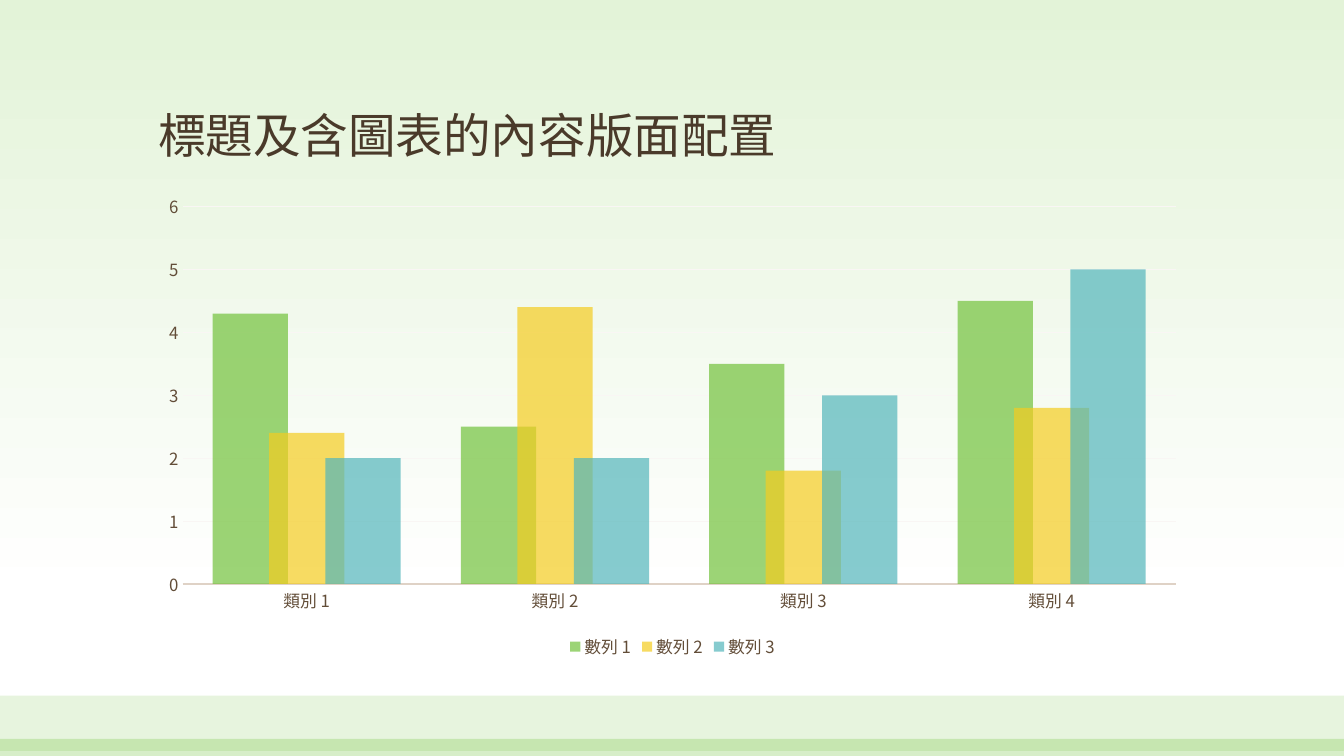
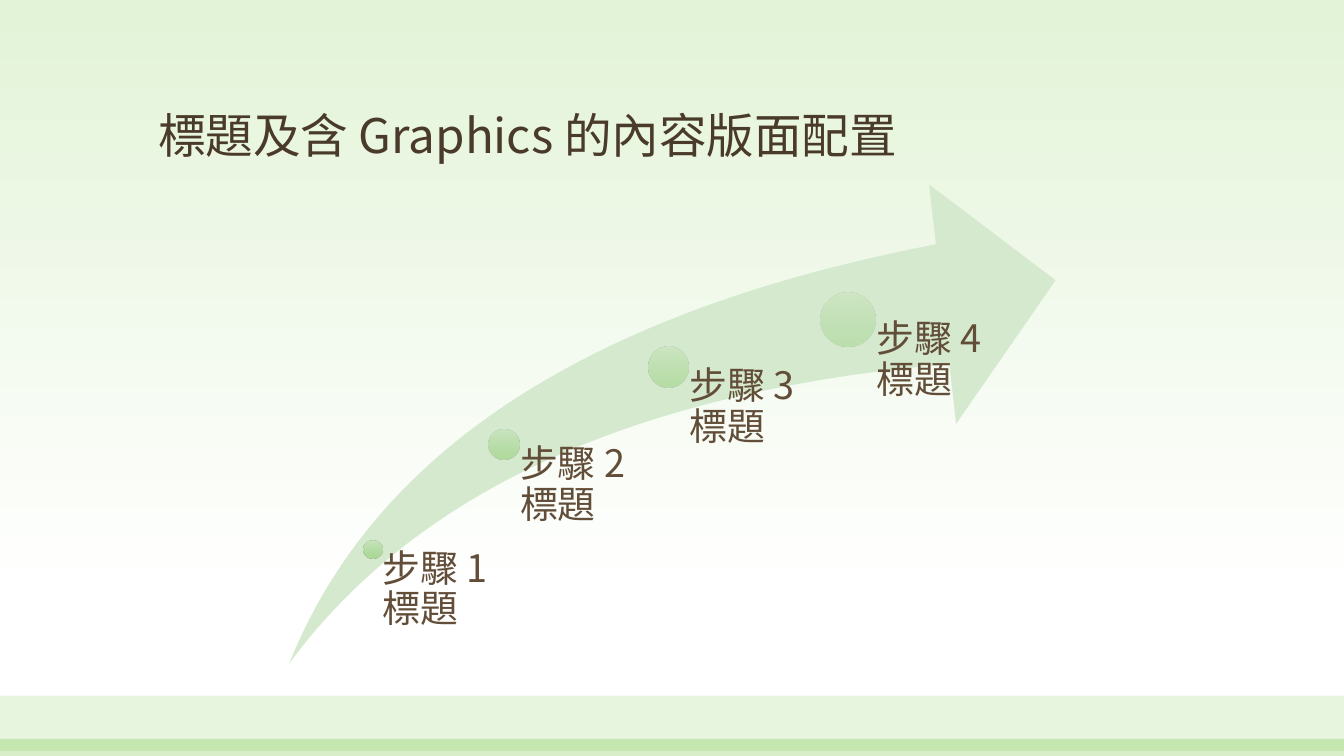
from dataclasses import dataclass

from lxml import etree
from pptx import Presentation
from pptx.chart.data import CategoryChartData
from pptx.dml.color import RGBColor
from pptx.enum.chart import XL_CHART_TYPE, XL_LEGEND_POSITION, XL_TICK_MARK
from pptx.enum.shapes import MSO_SHAPE
from pptx.enum.text import MSO_ANCHOR
from pptx.oxml.ns import qn
from pptx.util import Inches, Pt

RECT, OVAL, SWOOSH = MSO_SHAPE.RECTANGLE, MSO_SHAPE.OVAL, MSO_SHAPE.SWOOSH_ARROW
TOP, BOTTOM = MSO_ANCHOR.TOP, MSO_ANCHOR.BOTTOM
COLUMNS = XL_CHART_TYPE.COLUMN_CLUSTERED
LEGEND_BOTTOM = XL_LEGEND_POSITION.BOTTOM
NO_TICK = XL_TICK_MARK.NONE


@dataclass(frozen=True)
class Theme:
    font: str = "Noto Sans CJK TC"
    title_size: int = 34
    step_size: int = 27
    chart_size: int = 12
    title: str = "4A3A2A"
    text: str = "624D38"
    axis: str = "DFD2C6"
    grid: str = "F9F6F4"
    band: str = "72C23C"
    arrow: str = "D5E9CE"
    series: tuple = ("72C23C", "F4CC20", "53B6BB")
    background: tuple = ((0, "E3F3D8"), (79, "FFFFFF"))
    dot: tuple = ((0, "C8E5BC"), (50, "B3DBA2"), (100, "A4D78D"))


def rgb(color):
    return RGBColor.from_string(color)


def set_alpha(root, percent):
    for clr in root.iter(qn("a:srgbClr")):
        etree.SubElement(clr, qn("a:alpha"), val=str(percent * 1000))


def set_east_asian(root):
    """Use each Latin font for the East Asian text as well."""
    for latin in list(root.iter(qn("a:latin"))):
        ea = etree.Element(qn("a:ea"), typeface=latin.get("typeface"))
        latin.addnext(ea)


def set_gradient(fill, root, stops):
    """Fill from top to bottom with (percent, colour) stops."""
    fill.gradient()
    fill.gradient_angle = 270
    gs_list = root.find(".//" + qn("a:gsLst"))
    for gs in list(gs_list):
        gs_list.remove(gs)
    for pos, color in stops:
        gs = etree.SubElement(gs_list, qn("a:gs"), pos=str(pos * 1000))
        etree.SubElement(gs, qn("a:srgbClr"), val=color)


class Deck:
    def __init__(self, theme):
        self.theme = theme
        self.prs = Presentation()
        self.prs.slide_width, self.prs.slide_height = Inches(13.33), Inches(7.5)
        self.s = None

    def slide(self, title):
        t = self.theme
        self.s = self.prs.slides.add_slide(self.prs.slide_layouts[6])
        set_gradient(self.s.background.fill, self.s.element, t.background)
        # Footer bands
        for top, height, alpha in ((6.9, 0.55, 17), (7.33, 0.17, 28)):
            self.shape(RECT, 0, top, 13.33, height, t.band, alpha)
        self.text(title, 1.47, 0.48, 10.4, 1.19, t.title_size, t.title,
                  (0.1, 0.05, 0.1, 0.05), BOTTOM)

    def shape(self, kind, x, y, w, h, fill, alpha=100):
        """Add a borderless shape; fill is a colour or gradient stops."""
        sp = self.s.shapes.add_shape(kind, Inches(x), Inches(y), Inches(w), Inches(h))
        sp.shadow.inherit = False
        sp.line.fill.background()
        if isinstance(fill, str):
            sp.fill.solid()
            sp.fill.fore_color.rgb = rgb(fill)
        else:
            set_gradient(sp.fill, sp.element, fill)
        if alpha < 100:
            set_alpha(sp.element, alpha)
        return sp

    def text(self, text, x, y, w, h, size, color, insets, anchor=TOP):
        sp = self.s.shapes.add_textbox(Inches(x), Inches(y), Inches(w), Inches(h))
        tf = sp.text_frame
        tf.word_wrap = True
        tf.vertical_anchor = anchor
        (tf.margin_left, tf.margin_top,
         tf.margin_right, tf.margin_bottom) = map(Inches, insets)
        p = tf.paragraphs[0]
        p.line_spacing = 0.9
        r = p.add_run()
        r.text = text
        r.font.name, r.font.size = self.theme.font, Pt(size)
        r.font.color.rgb = rgb(color)
        set_east_asian(sp.element)

    def chart(self, categories, series, x, y, w, h):
        t = self.theme
        data = CategoryChartData()
        data.categories = categories
        for name, values in series:
            data.add_series(name, values)
        chart = self.s.shapes.add_chart(
            COLUMNS, Inches(x), Inches(y), Inches(w), Inches(h), data).chart
        chart.has_title = False
        chart.font.name, chart.font.size = t.font, Pt(t.chart_size)
        chart.font.color.rgb = rgb(t.text)
        chart.has_legend = True
        chart.legend.position = LEGEND_BOTTOM
        chart.legend.include_in_layout = False
        # Columns
        plot = chart.plots[0]
        plot.gap_width, plot.overlap = 80, 25
        plot.vary_by_categories = False
        for ser, color in zip(plot.series, t.series):
            ser.format.fill.solid()
            ser.format.fill.fore_color.rgb = rgb(color)
        for ser in chart.element.iter(qn("c:ser")):
            set_alpha(ser, 70)
        # Axes
        cat, val = chart.category_axis, chart.value_axis
        for axis in (cat, val):
            axis.major_tick_mark = axis.minor_tick_mark = NO_TICK
        val.format.line.fill.background()
        val.has_major_gridlines = True
        for line, color, width in ((cat.format.line, t.axis, 1.25),
                                   (val.major_gridlines.format.line, t.grid, 0.75)):
            line.color.rgb = rgb(color)
            line.width = Pt(width)
        set_east_asian(chart.element)

    def step(self, label, cx, cy, diameter, alpha, width, bottom):
        """Add a dot with its label starting at the dot's centre."""
        t = self.theme
        radius = diameter / 2
        self.shape(OVAL, cx - radius, cy - radius, diameter, diameter, t.dot, alpha)
        self.text(label, cx, cy, width, bottom - cy, t.step_size, t.text,
                  (diameter * 0.53, 0, 0, 0))


def main():
    deck = Deck(Theme())

    # Column chart
    deck.slide("標題及含圖表的內容版面配置")
    deck.chart([f"類別 {n}" for n in range(1, 5)],
               (("數列 1", (4.3, 2.5, 3.5, 4.5)),
                ("數列 2", (2.4, 4.4, 1.8, 2.8)),
                ("數列 3", (2, 2, 3, 5))),
               1.47, 1.83, 10.4, 4.75)

    # Rising arrow with four steps
    deck.slide("標題及含 Graphics 的內容版面配置")
    top, height = 1.83, 4.75
    arrow = deck.shape(SWOOSH, 2.87, top, 7.6, height, deck.theme.arrow)
    arrow.adjustments[0] = arrow.adjustments[1] = 0.25
    steps = ((3.7, 5.45, 0.18, 90, 1.3), (5, 4.41, 0.3, 77, 1.6),
             (6.63, 3.64, 0.4, 63, 1.6), (8.41, 3.17, 0.54, 50, 1.6))
    for n, (cx, cy, diameter, alpha, width) in enumerate(steps, 1):
        deck.step(f"步驟 {n} 標題", cx, cy, diameter, alpha, width, top + height)

    deck.prs.save("out.pptx")


if __name__ == "__main__":
    main()
